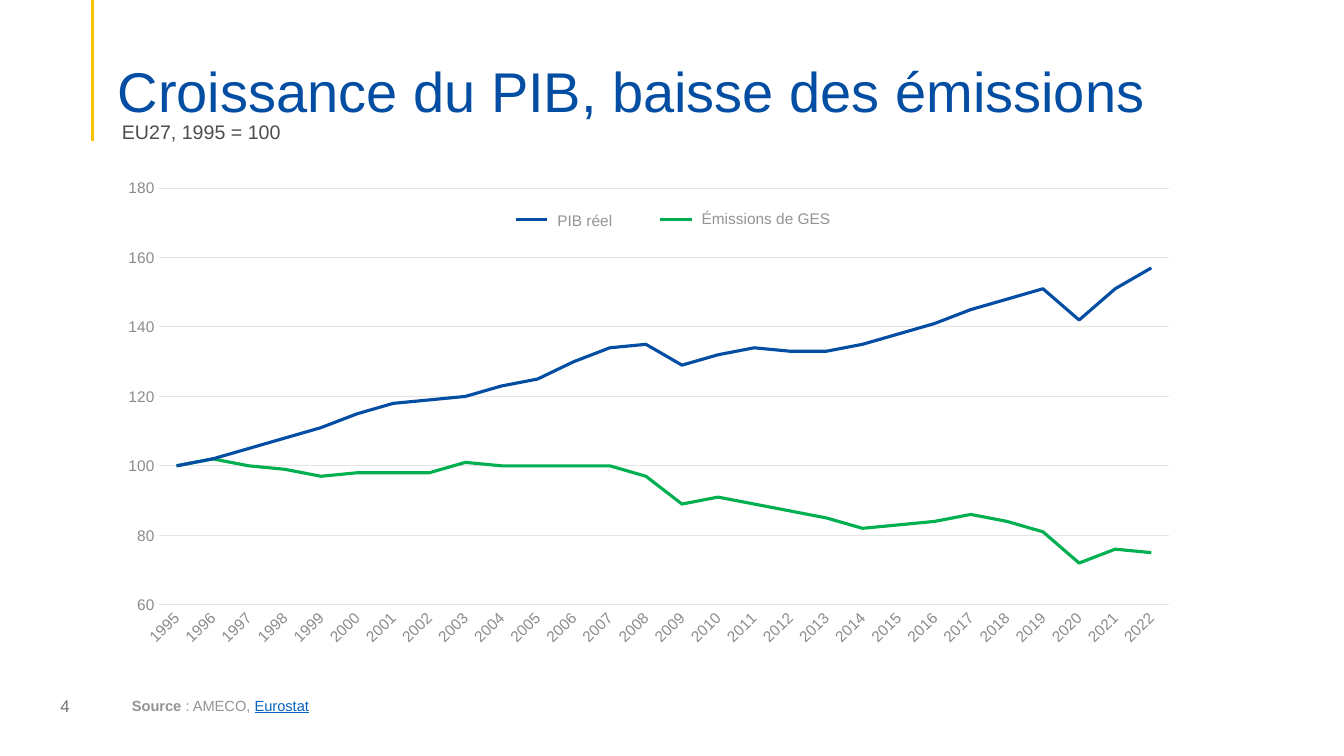
from dataclasses import dataclass

from lxml.etree import SubElement
from pptx import Presentation
from pptx.chart.axis import _BaseAxis
from pptx.chart.data import CategoryChartData
from pptx.dml.color import RGBColor
from pptx.enum.chart import XL_CHART_TYPE, XL_TICK_MARK
from pptx.enum.shapes import MSO_CONNECTOR
from pptx.enum.text import MSO_ANCHOR
from pptx.oxml import parse_xml
from pptx.oxml.ns import nsdecls, qn
from pptx.slide import Slide
from pptx.util import Inches, Pt

FONT = "Arial"
BLUE = RGBColor(0x03, 0x4E, 0xA2)
GREEN = RGBColor(0x00, 0xB0, 0x50)
GOLD = RGBColor(0xFF, 0xC0, 0x00)
LINK = RGBColor(0x05, 0x63, 0xC1)
DARK = RGBColor(0x4D, 0x4D, 0x4D)
MID = RGBColor(0x76, 0x76, 0x76)
TICK = RGBColor(0x8B, 0x8B, 0x8B)
PALE = RGBColor(0x94, 0x94, 0x94)
GRID = RGBColor(0xE4, 0xE4, 0xE4)

YEARS = range(1995, 2023)
PLOT = {"x": 0.037, "y": 0.03, "w": 0.945, "h": 0.849}
TILT = -45
DEGREE = 60000


@dataclass
class Run:
    text: str
    color: RGBColor
    size: float
    bold: bool = False
    line: bool = False


@dataclass
class Label:
    box: tuple[float, float, float, float]
    runs: list[Run]
    anchor: MSO_ANCHOR = MSO_ANCHOR.TOP
    base: float = 0.05
    space: float = 1.0
    wrap: bool = True


@dataclass
class Trend:
    name: str
    color: RGBColor
    values: list[int]
    key: float
    box: tuple[float, float, float, float]


TRENDS = [
    Trend("Émissions de GES", GREEN,
          [100, 102, 100, 99, 97, 98, 98, 98, 101, 100, 100, 100, 100, 97,
           89, 91, 89, 87, 85, 82, 83, 84, 86, 84, 81, 72, 76, 75],
          6.55, (6.86, 2.03, 1.49, 0.29)),
    Trend("PIB réel", BLUE,
          [100, 102, 105, 108, 111, 115, 118, 119, 120, 123, 125, 130, 134, 135,
           129, 132, 134, 133, 133, 135, 138, 141, 145, 148, 151, 142, 151, 157],
          5.12, (5.43, 2.05, 0.75, 0.29)),
]

LABELS = [
    Label((1.07, 0.38, 11.5, 0.86),
          [Run("Croissance du PIB, baisse des émissions", BLUE, 40)],
          MSO_ANCHOR.BOTTOM, 0, 0.9),
    Label((1.11, 1.06, 5.55, 0.37), [Run("EU27, 1995 = 100", DARK, 14)],
          MSO_ANCHOR.BOTTOM, 0, 0.9),
    Label((0.5, 6.8, 3, 0.4), [Run("4", MID, 12)], MSO_ANCHOR.MIDDLE),
    Label((1.21, 6.86, 7.71, 0.32),
          [Run("Source ", PALE, 10.5, bold=True),
           Run(": AMECO, ", PALE, 10.5),
           Run("Eurostat", LINK, 10.5, line=True)]),
]


def write(slide: Slide, label: Label) -> None:
    frame = slide.shapes.add_textbox(*map(Inches, label.box)).text_frame
    frame.word_wrap = label.wrap
    frame.vertical_anchor = label.anchor
    frame.margin_bottom = Inches(label.base)
    para = frame.paragraphs[0]
    para.line_spacing = label.space
    for item in label.runs:
        run = para.add_run()
        run.text = item.text
        font = run.font
        font.name, font.size, font.bold = FONT, Pt(item.size), item.bold
        font.underline = item.line
        font.color.rgb = item.color


def rule(slide: Slide, start: tuple[float, float], end: tuple[float, float],
         color: RGBColor) -> None:
    line = slide.shapes.add_connector(
        MSO_CONNECTOR.STRAIGHT, *map(Inches, start + end))
    line.line.color.rgb = color
    line.line.width = Pt(2.25)
    SubElement(line._element.spPr, qn("a:effectLst"))


def style(axis: _BaseAxis) -> None:
    axis.major_tick_mark = axis.minor_tick_mark = XL_TICK_MARK.NONE
    font = axis.tick_labels.font
    font.name, font.size = FONT, Pt(11)
    font.color.rgb = TICK


def plot(slide: Slide) -> None:
    """Add the line chart with its fixed inner plot area."""
    data = CategoryChartData()
    data.categories = [str(year) for year in YEARS]
    for trend in TRENDS:
        data.add_series(trend.name, trend.values)
    chart = slide.shapes.add_chart(
        XL_CHART_TYPE.LINE, *map(Inches, (1.18, 1.72, 10.61, 4.87)), data).chart
    chart.has_legend = chart.has_title = False
    chart.font.name, chart.font.size = FONT, Pt(11)
    chart.font.color.rgb = DARK
    chart.plots[0].vary_by_categories = False
    for series, trend in zip(chart.plots[0].series, TRENDS):
        series.smooth = False
        series.format.line.color.rgb = trend.color
        series.format.line.width = Pt(2.25)

    years, scale = chart.category_axis, chart.value_axis
    style(years)
    style(scale)
    body = years._element.find(qn("c:txPr")).find(qn("a:bodyPr"))
    body.set("rot", str(TILT * DEGREE))
    body.set("vert", "horz")
    scale.minimum_scale, scale.maximum_scale, scale.major_unit = 60, 180, 20
    scale.format.line.fill.background()
    for line in (years.format.line, scale.major_gridlines.format.line):
        line.color.rgb = GRID
        line.width = Pt(0.75)

    modes = "".join(f'<c:{side}Mode val="edge"/>' for side in "xy")
    sizes = "".join(f'<c:{side} val="{val}"/>' for side, val in PLOT.items())
    area = chart._chartSpace.chart.plotArea
    for old in area.findall(qn("c:layout")):
        area.remove(old)
    area.insert(0, parse_xml(
        f'<c:layout {nsdecls("c")}><c:manualLayout>'
        f'<c:layoutTarget val="inner"/>{modes}{sizes}'
        '</c:manualLayout></c:layout>'))


def main() -> None:
    deck = Presentation()
    deck.slide_width, deck.slide_height = Inches(13.33), Inches(7.5)
    slide = deck.slides.add_slide(deck.slide_layouts[6])
    rule(slide, (0.92, 0), (0.92, 1.4), GOLD)
    plot(slide)
    for label in LABELS:
        write(slide, label)
    for trend in TRENDS:
        write(slide, Label(trend.box, [Run(trend.name, PALE, 11)], wrap=False))
        rule(slide, (trend.key, 2.18), (trend.key + 0.31, 2.18), trend.color)
    deck.save("out.pptx")


if __name__ == "__main__":
    main()
